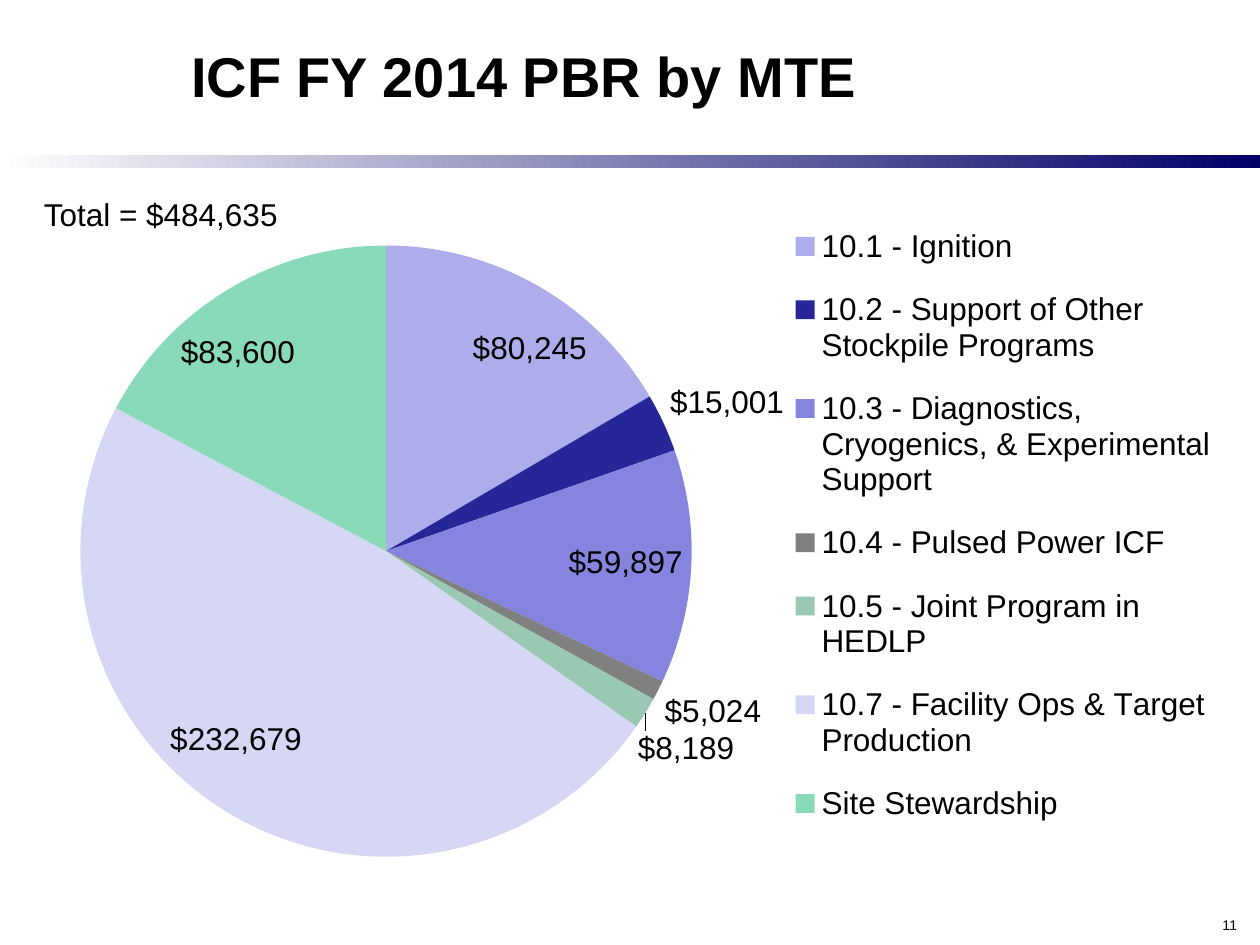
from lxml import etree
from pptx import Presentation
from pptx.chart.data import CategoryChartData
from pptx.dml.color import RGBColor
from pptx.enum.chart import XL_CHART_TYPE, XL_LABEL_POSITION as LabelPos, XL_LEGEND_POSITION as LegendPos
from pptx.enum.shapes import MSO_SHAPE
from pptx.enum.text import MSO_ANCHOR, PP_ALIGN
from pptx.oxml import parse_xml
from pptx.oxml.ns import nsdecls, qn
from pptx.util import Pt

COLORS = {
    "text": "000000", "rule_start": "FFFFFF", "rule_end": "000066",
    "ignition": "ADADEB", "other": "262699", "diagnostics": "8585E0",
    "pulsed": "808080", "joint": "99C9B3", "facility": "D6D6F5",
    "stewardship": "88DAB8",
}
BUDGET = [
    ("10.1 - Ignition", 80245, "ignition"),
    ("10.2 - Support of Other Stockpile Programs", 15001, "other"),
    ("10.3 - Diagnostics, Cryogenics, & Experimental Support", 59897, "diagnostics"),
    ("10.4 - Pulsed Power ICF", 5024, "pulsed"),
    ("10.5 - Joint Program in HEDLP", 8189, "joint"),
    ("10.7 - Facility Ops & Target Production", 232679, "facility"),
    ("Site Stewardship", 83600, "stewardship"),
]


def color(name):
    return RGBColor.from_string(COLORS[name])


def set_font(font, size, bold=False):
    for key, value in {"name": "Arial", "size": Pt(size), "bold": bold}.items():
        setattr(font, key, value)
    font.color.rgb = color("text")


def points(box):
    return [Pt(length) for length in box]


def add_title(page, box, words):
    title = page.shapes.title
    title.left, title.top, title.width, title.height = points(box)
    frame = title.text_frame
    frame.text = words
    frame.vertical_anchor = MSO_ANCHOR.MIDDLE
    para = frame.paragraphs[0]
    para.alignment, para.line_spacing = PP_ALIGN.LEFT, 0.9
    set_font(para.font, 32, True)


def add_label(page, box, words, size, align=PP_ALIGN.LEFT, wrap=True):
    frame = page.shapes.add_textbox(*points(box)).text_frame
    frame.word_wrap = wrap
    para = frame.paragraphs[0]
    para.text, para.alignment = words, align
    set_font(para.font, size)


def add_rule(page, box):
    """Draw the gradient band under the title."""
    rule = page.shapes.add_shape(MSO_SHAPE.RECTANGLE, *points(box))
    rule.shadow.inherit = False
    rule.line.fill.background()
    rule.fill.gradient()
    rule.fill.gradient_angle = 0
    for stop, name, position in zip(rule.fill.gradient_stops, ("rule_start", "rule_end"), (0, 1)):
        stop.color.rgb, stop.position = color(name), position


def make_layout(x, y, w, h, inner=False):
    """Return a manual chart layout, in fractions of the chart."""
    layout = parse_xml(f"<c:layout {nsdecls('c')}><c:manualLayout/></c:layout>")
    settings = {"layoutTarget": "inner"} if inner else {}
    settings.update(xMode="edge", yMode="edge", x=x, y=y, w=w, h=h)
    for tag, value in settings.items():
        etree.SubElement(layout[0], qn(f"c:{tag}")).set("val", str(value))
    return layout


def add_budget_pie(page, box):
    data = CategoryChartData()
    data.categories = [name for name, _, _ in BUDGET]
    data.add_series("Series 1", [value for _, value, _ in BUDGET])
    chart = page.shapes.add_chart(XL_CHART_TYPE.PIE, *points(box), data).chart
    chart.has_title = False
    set_font(chart.font, 18)

    plot = chart.plots[0]
    plot.vary_by_categories = True
    series = plot.series[0]
    for index, (_, _, name) in enumerate(BUDGET):
        point = series.points[index].format
        point.fill.solid()
        point.fill.fore_color.rgb = color(name)
        point.line.fill.background()

    labels = series.data_labels
    formats = {"show_value": True, "number_format": '"$"#,##0',
               "number_format_is_linked": False, "position": LabelPos.BEST_FIT}
    for key, value in formats.items():
        setattr(labels, key, value)
    set_font(labels.font, 18)

    chart.has_legend = True
    legend = chart.legend
    legend.position, legend.include_in_layout = LegendPos.RIGHT, False
    set_font(legend.font, 18)

    area = chart.element.find(f".//{qn('c:plotArea')}")
    for old in area.findall(qn("c:layout")):
        area.remove(old)
    area.insert(0, make_layout(0.03, 0.09, 0.52, 0.82, inner=True))
    key = chart.element.find(f".//{qn('c:legend')}")
    for old in key.findall(qn("c:layout")):
        key.remove(old)
    key.find(qn("c:legendPos")).addnext(make_layout(0.63, 0.03, 0.36, 0.87))


def main():
    deck = Presentation()
    deck.slide_width, deck.slide_height = Pt(720), Pt(540)
    page = deck.slides.add_slide(deck.slide_layouts[5])
    add_rule(page, (0, 88.5, 720, 7.5))
    add_budget_pie(page, (24, 102, 678, 426))
    add_title(page, (102, 24, 456, 42.5), "ICF FY 2014 PBR by MTE")
    add_label(page, (18, 108, 149, 29), "Total = $484,635", 18, wrap=False)
    add_label(page, (678, 520, 36, 16.5), "11", 8, PP_ALIGN.RIGHT)
    deck.save("out.pptx")


if __name__ == "__main__":
    main()
